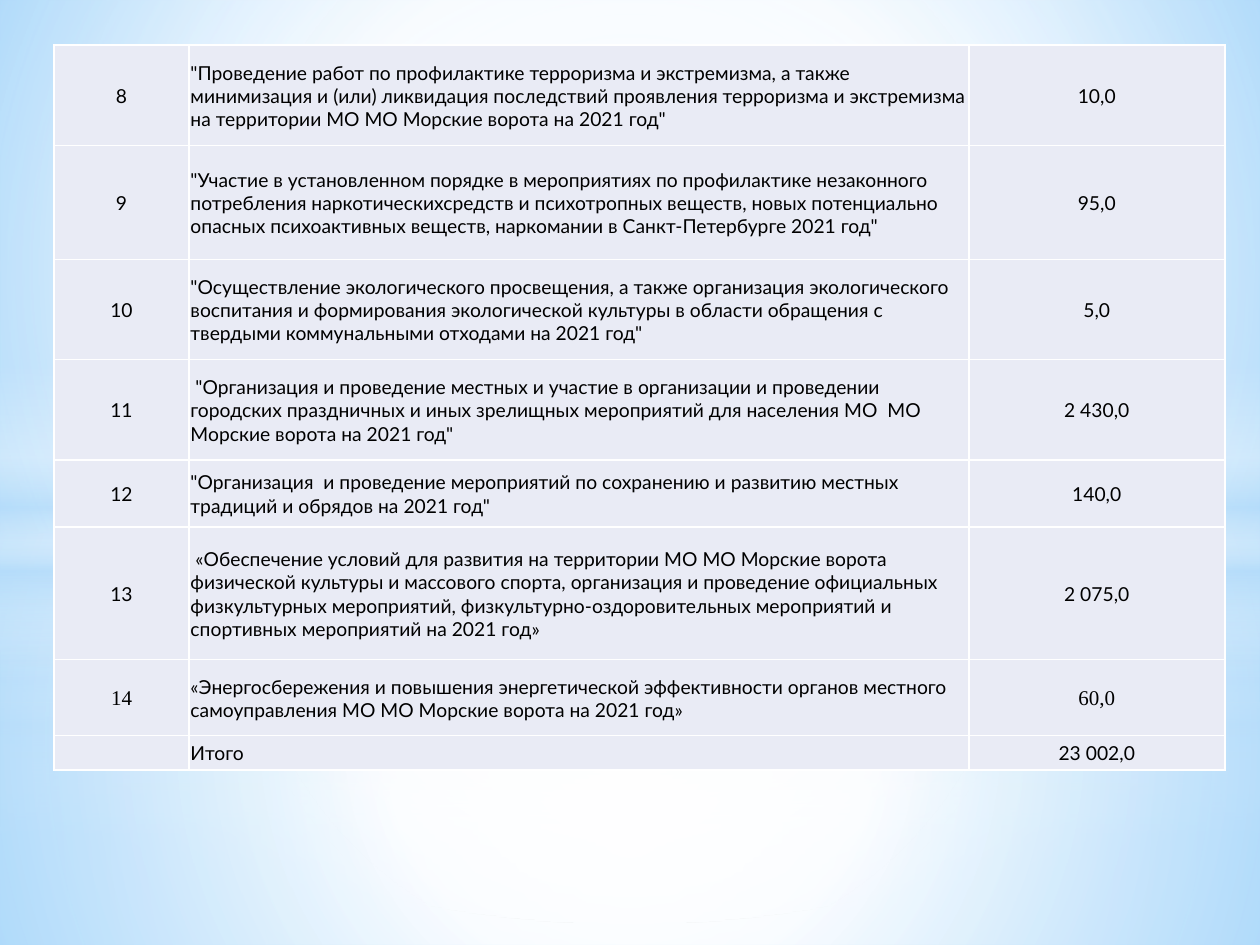
"""Build a slide with the closing rows of a municipal programme budget table."""
from lxml.etree import SubElement
from pptx import Presentation
from pptx.dml.color import RGBColor
from pptx.enum.shapes import MSO_SHAPE
from pptx.enum.text import MSO_ANCHOR, PP_ALIGN
from pptx.oxml import parse_xml
from pptx.oxml.ns import nsdecls, qn
from pptx.util import Cm, Pt

WHITE = RGBColor(0xFF, 0xFF, 0xFF)
BLACK = RGBColor(0x00, 0x00, 0x00)
PALE = RGBColor(0xB4, 0xDC, 0xFA)
SKY = RGBColor(0x9E, 0xD5, 0xFF)
BLUE = RGBColor(0x5B, 0xB9, 0xFF)
CELL = RGBColor(0xE9, 0xEB, 0xF5)

SANS = ("Lato", 11)
SERIF = ("Times New Roman", 12)
ROWS = [
    (2.02, "8", "\"Проведение работ по профилактике терроризма и экстремизма, а также "
     "минимизация и (или) ликвидация последствий проявления терроризма и экстремизма "
     "на территории МО МО Морские ворота на 2021 год\"", "10,0", SANS),
    (2.3, "9", "\"Участие в установленном порядке в мероприятиях по профилактике незаконного "
     "потребления наркотическихсредств и психотропных веществ, новых потенциально "
     "опасных психоактивных веществ, наркомании в Санкт-Петербурге 2021 год\"", "95,0", SANS),
    (2.02, "10", "\"Осуществление экологического просвещения, а также организация экологического "
     "воспитания и формирования экологической культуры в области обращения с "
     "твердыми коммунальными отходами на 2021 год\"", "5,0", SANS),
    (2.02, "11", " \"Организация и проведение местных и участие в организации и проведении "
     "городских праздничных и иных зрелищных мероприятий для населения МО  МО "
     "Морские ворота на 2021 год\"", "2 430,0", SANS),
    (1.35, "12", "\"Организация  и проведение мероприятий по сохранению и развитию местных "
     "традиций и обрядов на 2021 год\"", "140,0", SANS),
    (2.68, "13", " «Обеспечение условий для развития на территории МО МО Морские ворота "
     "физической культуры и массового спорта, организация и проведение официальных "
     "физкультурных мероприятий, физкультурно-оздоровительных мероприятий и "
     "спортивных мероприятий на 2021 год»", "2 075,0", SANS),
    (1.53, "14", "«Энергосбережения и повышения энергетической эффективности органов местного "
     "самоуправления МО МО Морские ворота на 2021 год»", "60,0", SERIF),
    (0.69, "", "Итого", "23 002,0", SANS),
]
COLUMNS = [2.72, 15.72, 5.16]
TABLE_LEFT, TABLE_TOP = 1.09, 0.91
WIDTH, HEIGHT = 25.4, 19.05

CENTER = (50, 50, 50, 50)
BACKGROUND = [(0, SKY, 100), (60, WHITE, 100), (100, BLUE, 100)]
BAND = [(0, WHITE, 0), (29, WHITE, 30), (45, PALE, 40),
        (55, WHITE, 26), (65, PALE, 60), (100, WHITE, 0)]


def glow(middle, *alphas):
    return [(position, color, alpha) for position, color, alpha
            in zip((0, middle, 100), (WHITE, WHITE, PALE), alphas)]


def halo(middle):
    return [(0, WHITE, 100), (middle, WHITE, 0)]


LAYERS = [
    (MSO_SHAPE.RECTANGLE, 14.17, 4.88, glow(37, 91, 76, 79), CENTER),
    (MSO_SHAPE.RECTANGLE, 0, 14.17, glow(48, 89, 62, 79), CENTER),
    (MSO_SHAPE.RECTANGLE, 10.46, 6.35, BAND, None),
    (MSO_SHAPE.OVAL, 4.45, 14.17, halo(56), CENTER),
    (MSO_SHAPE.RECTANGLE, 10.74, 8.31, glow(37, 92, 77, 80), CENTER),
    (MSO_SHAPE.RECTANGLE, 0, 10.74, glow(48, 90, 63, 80), CENTER),
    (MSO_SHAPE.RECTANGLE, 7.37, 6.35, BAND, None),
    (MSO_SHAPE.OVAL, 4.45, 14.17, halo(54), CENTER),
]


def set_gradient(fill, owner, stops, focus):
    fill.gradient()
    old = owner.find(".//" + qn("a:gradFill"))
    stop_xml = "".join(
        f'<a:gs pos="{position * 1000}"><a:srgbClr val="{color}">'
        f'<a:alpha val="{alpha * 1000}"/></a:srgbClr></a:gs>'
        for position, color, alpha in stops)
    if focus:
        edges = " ".join(f'{side}="{value * 1000}"' for side, value in zip("ltrb", focus))
        shade = f'<a:path path="circle"><a:fillToRect {edges}/></a:path>'
    else:
        shade = '<a:lin ang="5400000" scaled="0"/>'
    new = parse_xml(f'<a:gradFill {nsdecls("a")} rotWithShape="1">'
                    f'<a:gsLst>{stop_xml}</a:gsLst>{shade}</a:gradFill>')
    old.getparent().replace(old, new)


def add_layer(page, kind, top, height, stops, focus):
    layer = page.shapes.add_shape(kind, Cm(0), Cm(top), Cm(WIDTH), Cm(height))
    layer.shadow.inherit = False
    layer.line.fill.background()
    set_gradient(layer.fill, layer.element, stops, focus)


def set_borders(cell):
    properties = cell._tc.get_or_add_tcPr()
    for index, side in enumerate(("lnL", "lnR", "lnT", "lnB")):
        line = SubElement(properties, qn(f"a:{side}"), w=str(Pt(1)))
        solid = SubElement(line, qn("a:solidFill"))
        SubElement(solid, qn("a:srgbClr"), val=str(WHITE))
        properties.insert(index, line)


def fill_cell(cell, text, font, alignment):
    cell.fill.solid()
    cell.fill.fore_color.rgb = CELL
    set_borders(cell)
    cell.vertical_anchor = MSO_ANCHOR.MIDDLE
    cell.margin_left = cell.margin_right = cell.margin_top = Cm(0.03)
    cell.margin_bottom = Cm(0)
    para = cell.text_frame.paragraphs[0]
    if text:
        para.text = text
    para.alignment = alignment
    para.font.name, para.font.size = font[0], Pt(font[1])
    para.font.color.rgb = BLACK


def add_budget(page):
    frame = page.shapes.add_table(
        len(ROWS), len(COLUMNS), Cm(TABLE_LEFT), Cm(TABLE_TOP),
        Cm(sum(COLUMNS)), Cm(sum(row[0] for row in ROWS)))
    table = frame.table
    table.first_row = table.horz_banding = False
    for column, width in zip(table.columns, COLUMNS):
        column.width = Cm(width)
    for row, (height, number, programme, amount, font) in zip(table.rows, ROWS):
        row.height = Cm(height)
        entries = [(number, font, PP_ALIGN.CENTER), (programme, SANS, PP_ALIGN.LEFT),
                   (amount, font, PP_ALIGN.CENTER)]
        for cell, entry in zip(row.cells, entries):
            fill_cell(cell, *entry)


def main():
    deck = Presentation()
    deck.slide_width, deck.slide_height = Cm(WIDTH), Cm(HEIGHT)
    page = deck.slides.add_slide(deck.slide_layouts[6])
    set_gradient(page.background.fill, page.element, BACKGROUND, (20, 10, 20, 60))
    for layer in LAYERS:
        add_layer(page, *layer)
    add_budget(page)
    deck.save("out.pptx")


if __name__ == "__main__":
    main()
